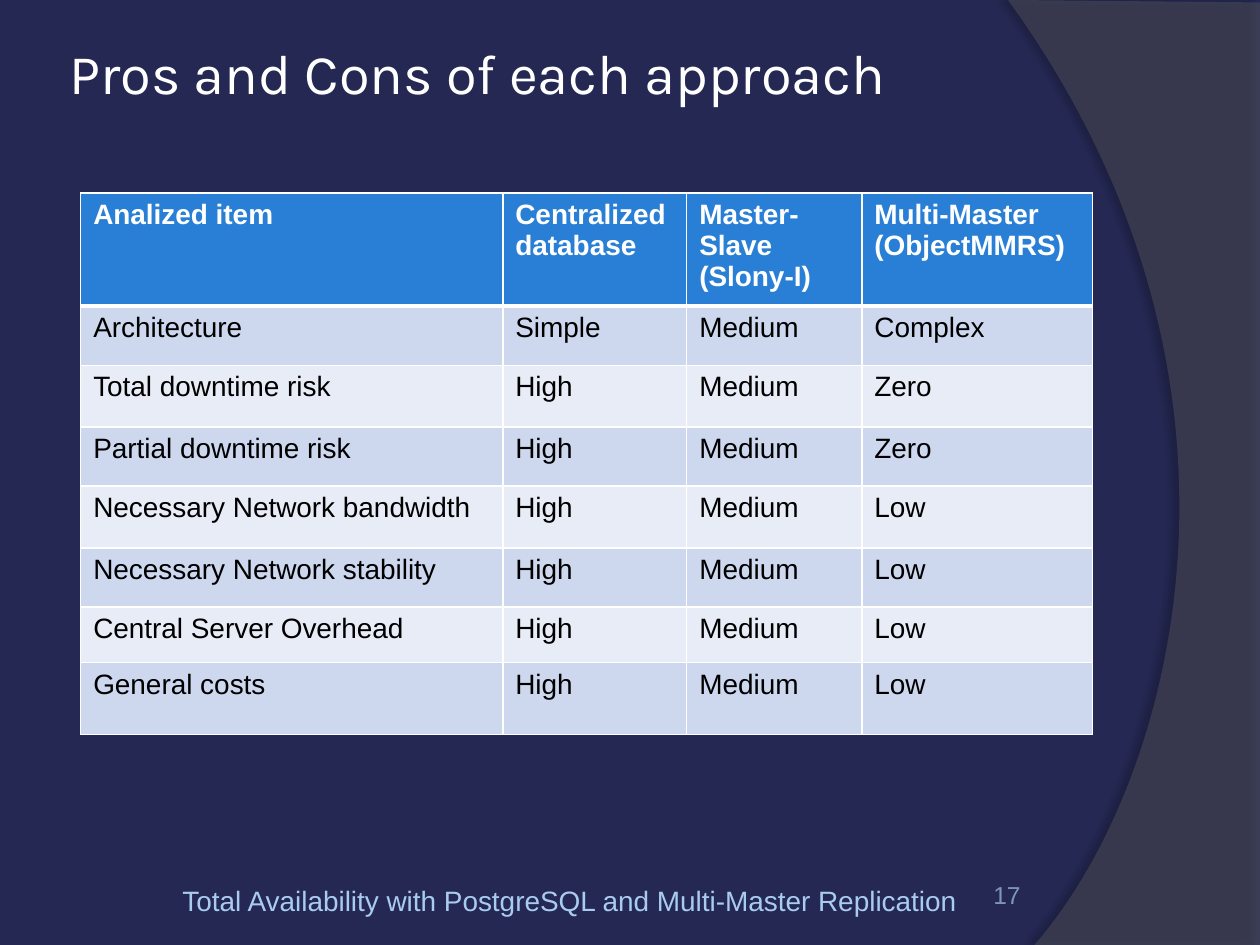
from dataclasses import dataclass

from lxml import etree
from pptx import Presentation
from pptx.dml.color import RGBColor
from pptx.enum import text
from pptx.oxml import ns
from pptx.util import Inches, Pt


@dataclass(frozen=True)
class Theme:
    background: str = "242852"
    curve: str = "5E5E5E"
    white: str = "FFFFFF"
    black: str = "000000"
    header: str = "297FD5"
    bands: tuple = ("CDD8EF", "E8ECF7")
    footer: str = "A9CCEE"
    number: str = "7F96B8"
    heading_font: str = "Karla"
    body_font: str = "Arial"
    title_size: int = 32
    body_size: int = 16
    number_size: int = 14


theme = Theme()


def write(frame, content, color, size=theme.body_size, font=theme.body_font,
          bold=False, align=text.PP_ALIGN.LEFT, anchor=text.MSO_ANCHOR.TOP,
          inset=None, wrap=True):
    frame.word_wrap = wrap
    frame.vertical_anchor = anchor
    if inset is not None:
        frame.margin_left = frame.margin_right = Inches(inset)
        frame.margin_top = frame.margin_bottom = Inches(inset)
    for index, line in enumerate(content.split("\n")):
        para = frame.add_paragraph() if index else frame.paragraphs[0]
        para.alignment = align
        span = para.add_run()
        span.text = line
        span.font.name = font
        span.font.size = Pt(size)
        span.font.bold = bold
        span.font.color.rgb = RGBColor.from_string(color)


def add_element(parent, tag, **attributes):
    return etree.SubElement(parent, ns.qn(tag), attributes)


deck = Presentation()
deck.slide_width, deck.slide_height = Inches(10), Inches(7.5)
page = deck.slides.add_slide(deck.slide_layouts[6])
page.background.fill.solid()
page.background.fill.fore_color.rgb = RGBColor.from_string(theme.background)

controls = [(8.21, 7.5), (9.35, 6.19), (10.18, 3), (8, 0)]
steps = 60
outline = [(10, 7.5)]
for step in range(steps + 1):
    t = step / steps
    weights = [(1 - t) ** 3, 3 * t * (1 - t) ** 2, 3 * t ** 2 * (1 - t), t ** 3]
    outline.append(tuple(sum(w * point[axis] for w, point in zip(weights, controls))
                         for axis in (0, 1)))
builder = page.shapes.build_freeform(Inches(10), Inches(0.02))
builder.add_line_segments([(Inches(x), Inches(y)) for x, y in outline], close=True)
curve = builder.convert_to_shape()
curve.shadow.inherit = False
curve.line.fill.background()
curve.fill.solid()
curve.fill.fore_color.rgb = RGBColor.from_string(theme.curve)
properties = curve.element.spPr
add_element(properties.find(".//" + ns.qn("a:srgbClr")), "a:alpha", val="40000")
shadow = add_element(properties.find(ns.qn("a:effectLst")), "a:outerShdw",
                     blurRad=str(Pt(4)), dist=str(Pt(4)), dir="10800000",
                     algn="r", rotWithShape="0")
shade = add_element(shadow, "a:srgbClr", val=theme.black)
add_element(shade, "a:alpha", val="45000")

labels = [
    ((1.35, 6.96, 6.36, 0.4),
     "Total Availability with PostgreSQL and Multi-Master Replication",
     dict(color=theme.footer, wrap=False)),
    ((0.5, 0.16, 9.36, 0.82), "Pros and Cons of each approach",
     dict(color=theme.white, size=theme.title_size, font=theme.heading_font,
          anchor=text.MSO_ANCHOR.MIDDLE, inset=0.05)),
    ((7.72, 6.82, 0.38, 0.4), "17",
     dict(color=theme.number, size=theme.number_size, inset=0,
          align=text.PP_ALIGN.RIGHT, anchor=text.MSO_ANCHOR.BOTTOM)),
]
for place, content, style in labels:
    box = page.shapes.add_textbox(*map(Inches, place))
    write(box.text_frame, content, **style)

comparison = [
    ("Analized item", "Centralized database", "Master-Slave\n(Slony-I)",
     "Multi-Master\n(ObjectMMRS)"),
    ("Architecture", "Simple", "Medium", "Complex"),
    ("Total downtime risk", "High", "Medium", "Zero"),
    ("Partial downtime risk", "High", "Medium", "Zero"),
    ("Necessary Network bandwidth", "High", "Medium", "Low"),
    ("Necessary Network stability", "High", "Medium", "Low"),
    ("Central Server Overhead", "High", "Medium", "Low"),
    ("General costs", "High", "Medium", "Low"),
]
widths = [3.35, 1.46, 1.39, 1.83]
heights = [0.57, 0.47, 0.49, 0.47, 0.49, 0.47, 0.44, 0.57]
table = page.shapes.add_table(len(heights), len(widths), Inches(0.64), Inches(1.53),
                              Inches(sum(widths)), Inches(sum(heights))).table
for column, width in zip(table.columns, widths):
    column.width = Inches(width)
for row, height in zip(table.rows, heights):
    row.height = Inches(height)

for row_index, values in enumerate(comparison):
    is_header = row_index == 0
    fill = theme.header if is_header else theme.bands[(row_index - 1) % 2]
    thick_side = {0: "a:lnB", 1: "a:lnT"}.get(row_index)
    for column_index, value in enumerate(values):
        cell = table.cell(row_index, column_index)
        write(cell.text_frame, value, theme.white if is_header else theme.black,
              bold=is_header)
        for side in ("a:lnL", "a:lnR", "a:lnT", "a:lnB"):
            border = add_element(cell._tc.get_or_add_tcPr(), side,
                                 w=str(Pt(3 if side == thick_side else 1)))
            add_element(add_element(border, "a:solidFill"), "a:srgbClr", val=theme.white)
        cell.fill.solid()
        cell.fill.fore_color.rgb = RGBColor.from_string(fill)

deck.save("out.pptx")
